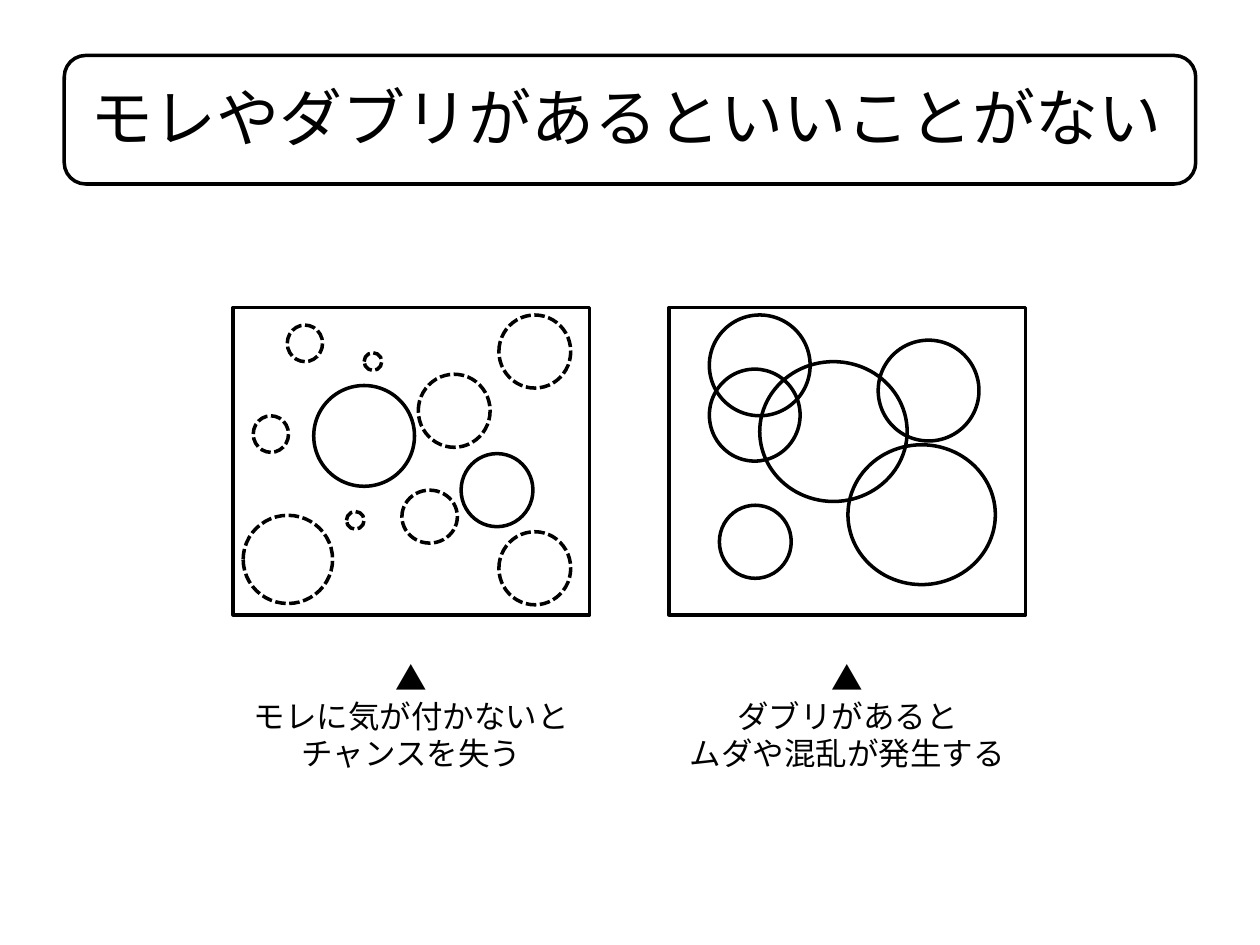
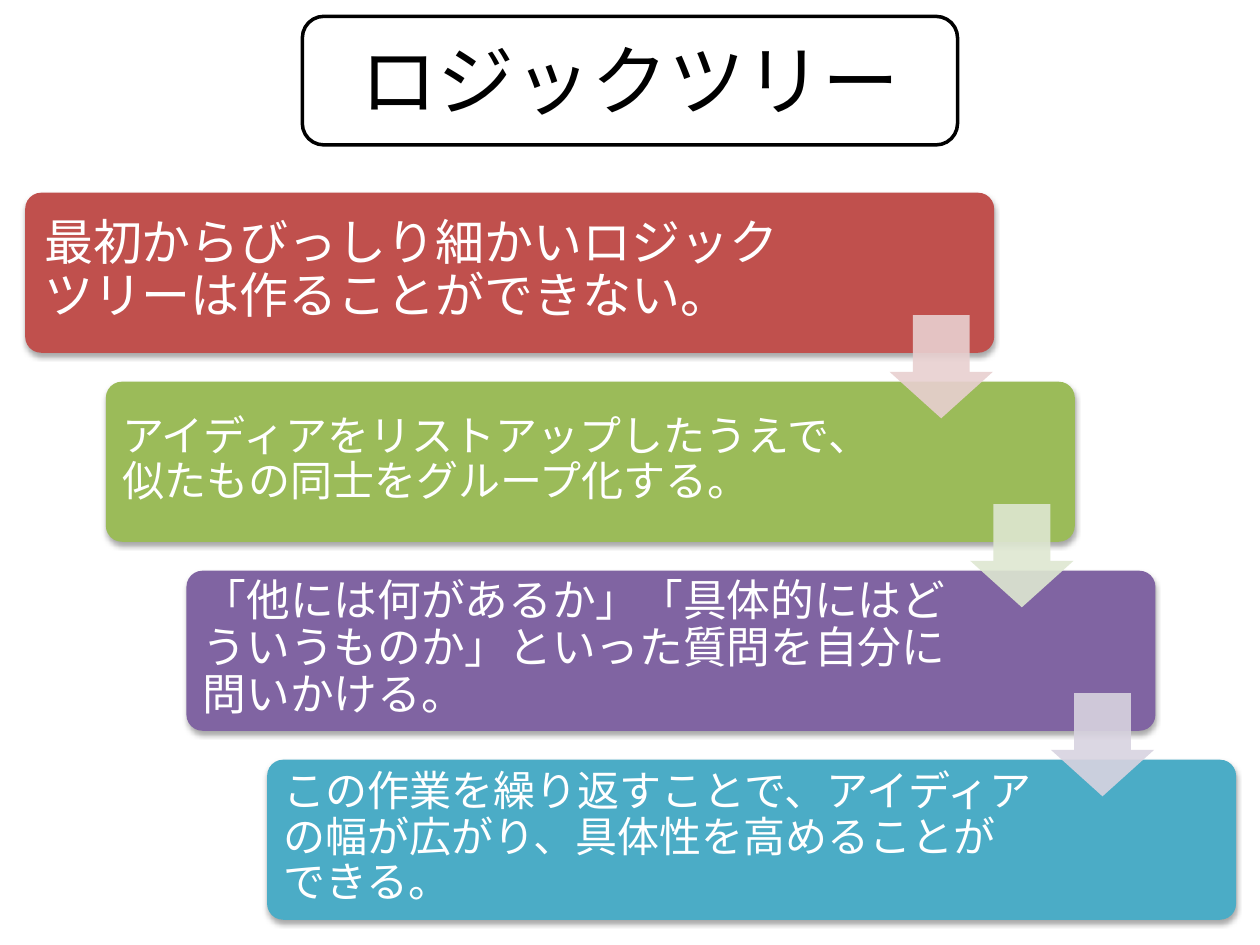
import pptx
import pptx.util
import pptx.dml.color
import pptx.enum.dml
import pptx.enum.lang
import pptx.enum.shapes
import pptx.enum.text
import pptx.oxml
import pptx.oxml.ns
import lxml.etree

Inches = pptx.util.Inches
Pt = pptx.util.Pt
Kind = pptx.enum.shapes.MSO_SHAPE
Align = pptx.enum.text.PP_ALIGN
Fit = pptx.enum.text.MSO_AUTO_SIZE
Middle = pptx.enum.text.MSO_ANCHOR.MIDDLE
qn = pptx.oxml.ns.qn

COLORS = {
    "ink": "000000", "paper": "FFFFFF",
    "red": "C0504D", "green": "9BBB59", "purple": "8064A2", "blue": "4BACC6",
    "pink": "E8D0D0", "mint": "DEE7D1", "lilac": "D8D3E0",
}
SIDES = ("left", "top", "right", "bottom")


class Deck:
    font = "Noto Sans CJK JP"
    line = 2

    def __init__(self):
        self.show = pptx.Presentation()
        self.show.slide_width = Inches(10)
        self.show.slide_height = Inches(7.5)
        self.slide = None

    def page(self):
        self.slide = self.show.slides.add_slide(self.show.slide_layouts[6])

    def color(self, name):
        return pptx.dml.color.RGBColor.from_string(COLORS[name])

    def shape(self, kind, box, fill=None, dash=None, adjust=()):
        item = self.slide.shapes.add_shape(kind, *map(Inches, box))
        item.shadow.inherit = False
        for i, value in enumerate(adjust):
            item.adjustments[i] = value
        if fill:
            item.fill.solid()
            item.fill.fore_color.rgb = self.color(fill)
            item.line.fill.background()
        else:
            item.fill.background()
            item.line.color.rgb = self.color("ink")
            item.line.width = Pt(self.line)
            item.line.dash_style = dash
        return item

    def circles(self, spots, dash=None):
        for spot in spots:
            self.shape(Kind.OVAL, spot, dash=dash)

    def text(self, lines, box, size, color="ink", align=Align.CENTER,
             inset=None, space=None, **frame):
        body = self.slide.shapes.add_textbox(*map(Inches, box)).text_frame
        format = {"word_wrap": True, **frame}
        if inset:
            format.update({f"margin_{side}": Inches(inset) for side in SIDES})
        for key, value in format.items():
            setattr(body, key, value)
        body.text = "\n".join(lines)
        style = {"name": self.font, "size": Pt(size),
                 "language_id": pptx.enum.lang.MSO_LANGUAGE_ID.JAPANESE}
        for para in body.paragraphs:
            para.alignment = align
            para.line_spacing = space
            for run in para.runs:
                for key, value in style.items():
                    setattr(run.font, key, value)
                run.font.color.rgb = self.color(color)
                east = lxml.etree.SubElement(run.font._element, qn("a:ea"))
                east.set("typeface", self.font)

    def title(self, words, box, size, frame):
        self.text([words], box, size, vertical_anchor=Middle)
        self.shape(Kind.ROUNDED_RECTANGLE, frame)

    def panel(self, left, lines):
        self.shape(Kind.RECTANGLE, (left, 2.44, 2.83, 2.44))
        self.text(["▲", *lines], (left, 5.18, 2.83, 1.01), 18,
                  auto_size=Fit.SHAPE_TO_FIT_TEXT)

    def shade(self, item):
        effect = item._element.spPr.find(qn("a:effectLst"))
        cast = lxml.etree.SubElement(
            effect, qn("a:outerShdw"), blurRad=str(Pt(3.1)),
            dist=str(Pt(1.8)), dir="5400000", rotWithShape="0")
        tone = lxml.etree.SubElement(cast, qn("a:srgbClr"), val=COLORS["ink"])
        lxml.etree.SubElement(tone, qn("a:alpha"), val="35000")

    def step(self, left, top, words, fill, size, inset):
        self.shade(self.shape(Kind.ROUNDED_RECTANGLE, (left, top, 7.69, 1.27),
                              fill, adjust=[0.1]))
        width = 6.21 if inset > 0.1 else 6.15
        self.text([words], (left + 0.03, top + 0.03, width, 1.19), size,
                  "paper", Align.LEFT, inset, 0.9, vertical_anchor=Middle)

    def arrow(self, left, top, fill):
        item = self.shape(Kind.DOWN_ARROW, (left, top, 0.82, 0.82), fill,
                          adjust=[0.55, 0.45])
        tone = item._element.spPr.find(qn("a:solidFill"))[0]
        lxml.etree.SubElement(tone, qn("a:alpha"), val="90000")


def flaws(deck):
    deck.page()
    deck.panel(1.85, ["モレに気が付かないと", "チャンスを失う"])
    deck.panel(5.31, ["ダブリがあると", "ムダや混乱が発生する"])
    found = [(3.66, 3.6, 0.57, 0.58), (2.49, 3.06, 0.8, 0.8)]
    missed = [
        (3.96, 2.5, 0.57, 0.58), (3.96, 4.22, 0.57, 0.58),
        (3.19, 3.89, 0.44, 0.42), (3.32, 2.97, 0.57, 0.58),
        (1.93, 4.09, 0.71, 0.7), (2.28, 2.58, 0.28, 0.29),
        (2.01, 3.3, 0.28, 0.29), (2.75, 4.06, 0.14, 0.14),
        (2.89, 2.8, 0.14, 0.14),
    ]
    doubled = [
        (5.63, 2.5, 0.8, 0.8), (5.63, 2.93, 0.72, 0.73),
        (6.03, 2.87, 1.17, 1.11), (6.97, 2.7, 0.8, 0.8),
        (6.73, 3.53, 1.17, 1.11), (5.71, 4.01, 0.57, 0.58),
    ]
    deck.circles(found + doubled)
    deck.circles(missed, pptx.enum.dml.MSO_LINE.SQUARE_DOT)
    deck.title("モレやダブリがあるといいことがない", (0.28, 0.3, 9.37, 1.25), 36,
               (0.51, 0.44, 8.98, 1.02))


def tree(deck):
    deck.page()
    steps = [
        ("最初からびっしり細かいロジックツリーは作ることができない。", "red", 28, 0.12),
        ("アイディアをリストアップしたうえで、似たもの同士をグループ化する。", "green", 24, 0.1),
        ("「他には何があるか」「具体的にはどういうものか」といった質問を自分に問いかける。",
         "purple", 25, 0.1),
        ("この作業を繰り返すことで、アイディアの幅が広がり、具体性を高めることができる。",
         "blue", 24, 0.1),
    ]
    for i, step in enumerate(steps):
        deck.step(0.2 + 0.64 * i, 1.53 + 1.5 * i, *step)
    for i, fill in enumerate(["pink", "mint", "lilac"]):
        deck.arrow(7.06 + 0.64 * i, 2.5 + 1.5 * i, fill)
    deck.title("ロジックツリー", (0.2, 0, 9.61, 1.25), 44, (2.4, 0.13, 5.2, 1.02))


def main():
    deck = Deck()
    flaws(deck)
    tree(deck)
    deck.show.save("out.pptx")


if __name__ == "__main__":
    main()
